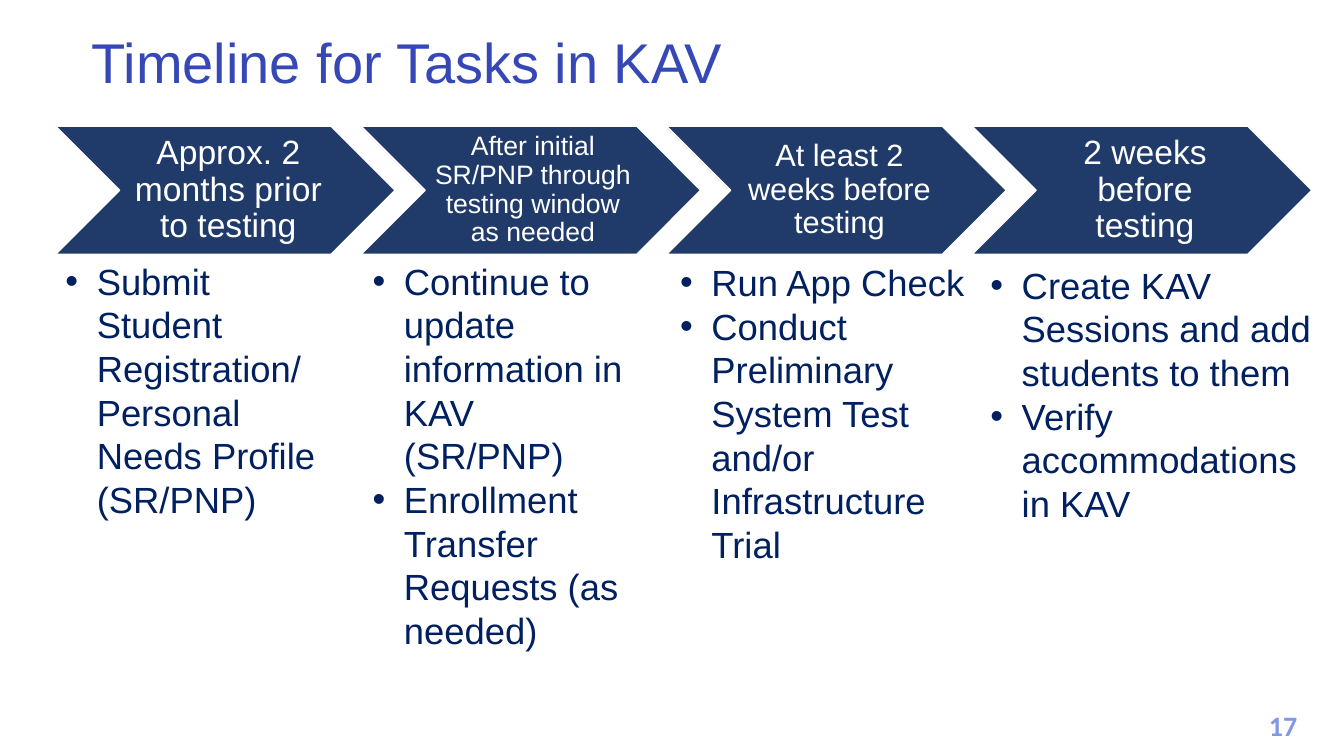
from pptx import Presentation
from pptx import util as u
from pptx.dml.color import RGBColor
from pptx.enum import shapes, text
from pptx.oxml.ns import qn
from lxml import etree

COLOURS = {
    "title": "3647B6",
    "arrow": "203B6A",
    "white": "FFFFFF",
    "body": "002060",
    "number": "8397E7",
}
ARROW_LEFT, ARROW_STEP, ARROW_TOP = 1.4, 7.7, 3.18
ARROW_WIDTH, ARROW_HEIGHT = 8.56, 3.23
LABEL_OFFSET, LABEL_WIDTH = 1.61, 5.33

STAGES = [
    ("Approx. 2 months prior to testing", 24, (1.4, 6.4, 7.16, 6.93),
     ["Submit Student Registration/\nPersonal Needs Profile (SR/PNP)"]),
    ("After initial SR/PNP through testing window as needed", 19, (9.14, 6.4, 6.83, 10.26),
     ["Continue to update information in KAV (SR/PNP)",
      "Enrollment Transfer Requests (as needed)"]),
    ("At least 2 weeks before testing", 22, (16.89, 6.43, 7.75, 8.03),
     ["Run App Check",
      "Conduct Preliminary System Test and/or Infrastructure Trial"]),
    ("2 weeks before testing", 24, (24.71, 6.5, 8.94, 6.93),
     ["Create KAV Sessions and add students to them",
      "Verify accommodations in KAV"]),
]


def colour(name):
    return RGBColor.from_string(COLOURS[name])


def style_para(para, size, shade, font="Arial", bold=False):
    for span in para.runs:
        span.font.size = u.Pt(size)
        span.font.name = font
        span.font.bold = bold
        span.font.color.rgb = colour(shade)


def add_box(page, place):
    box = page.shapes.add_textbox(*(u.Cm(value) for value in place))
    box.text_frame.word_wrap = True
    return box.text_frame


def add_line(page, place, words, size, shade, **style):
    frame = add_box(page, place)
    frame.text = words
    para = frame.paragraphs[0]
    style_para(para, size, shade, **style)
    return frame, para


def add_arrow(page, left):
    arrow = page.shapes.add_shape(
        shapes.MSO_SHAPE.CHEVRON, u.Cm(left), u.Cm(ARROW_TOP),
        u.Cm(ARROW_WIDTH), u.Cm(ARROW_HEIGHT))
    arrow.shadow.inherit = False
    arrow.fill.solid()
    arrow.fill.fore_color.rgb = colour("arrow")
    arrow.line.color.rgb = colour("white")
    arrow.line.width = u.Pt(1)


def add_label(page, left, words, size):
    place = (left + LABEL_OFFSET, ARROW_TOP, LABEL_WIDTH, ARROW_HEIGHT)
    frame, para = add_line(page, place, words, size, "white")
    frame.vertical_anchor = text.MSO_ANCHOR.MIDDLE
    frame.margin_left = u.Cm(0.2 if size < 20 else 0.25)
    frame.margin_top = frame.margin_right = frame.margin_bottom = u.Cm(0.09)
    para.alignment = text.PP_ALIGN.CENTER
    para.line_spacing = 0.9


def add_bullet(para):
    props = para._p.get_or_add_pPr()
    props.set("marL", str(u.Cm(0.79)))
    props.set("indent", str(-u.Cm(0.79)))
    etree.SubElement(props, qn("a:buFont")).set("typeface", "Arial")
    etree.SubElement(props, qn("a:buChar")).set("char", "•")


def add_tasks(page, place, tasks):
    frame = add_box(page, place)
    for index, task in enumerate(tasks):
        para = frame.add_paragraph() if index else frame.paragraphs[0]
        para.text = task
        add_bullet(para)
        style_para(para, 26, "body")


def main():
    deck = Presentation()
    deck.slide_width, deck.slide_height = u.Cm(33.87), u.Cm(19.05)
    page = deck.slides.add_slide(deck.slide_layouts[6])

    number = add_line(page, (31.55, 17.73, 1.57, 1.12), "17", 20, "number",
                      font="Calibri", bold=True)[1]
    number.alignment = text.PP_ALIGN.CENTER
    add_line(page, (2.06, 0.58, 31, 1.96), "Timeline for Tasks in KAV", 40, "title")

    for index, (label, size, place, tasks) in enumerate(STAGES):
        left = ARROW_LEFT + index * ARROW_STEP
        add_arrow(page, left)
        add_label(page, left, label, size)
        add_tasks(page, place, tasks)

    deck.save("out.pptx")


if __name__ == "__main__":
    main()
